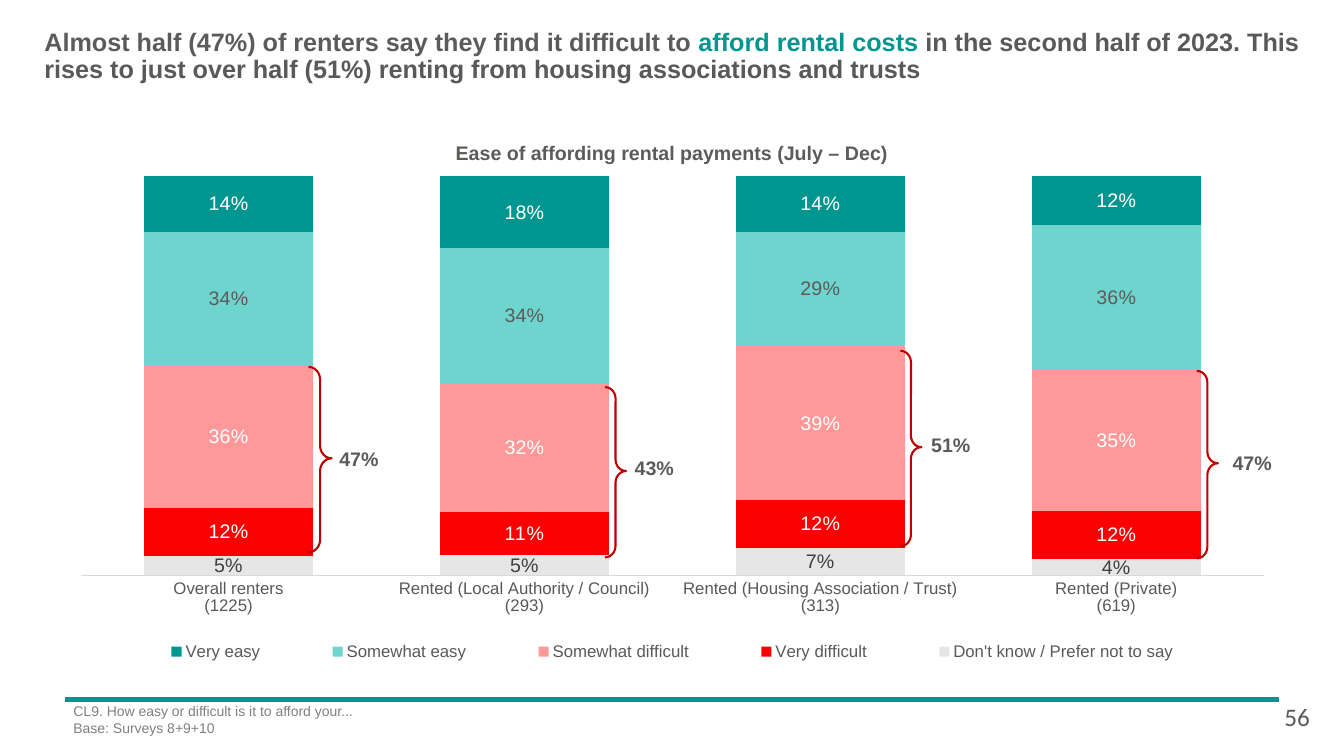
from lxml.etree import SubElement
from pptx import Presentation
from pptx.chart.data import CategoryChartData
from pptx.dml.color import RGBColor
from pptx.enum.chart import XL_CHART_TYPE, XL_LABEL_POSITION, XL_LEGEND_POSITION, XL_TICK_MARK
from pptx.enum.shapes import MSO_CONNECTOR, MSO_SHAPE
from pptx.enum.text import MSO_ANCHOR, MSO_AUTO_SIZE, PP_ALIGN
from pptx.oxml import parse_xml
from pptx.oxml.ns import nsdecls, qn
from pptx.util import Inches, Pt

TEAL = RGBColor(0x00, 0x96, 0x90)
LIGHT_TEAL = RGBColor(0x6D, 0xD5, 0xCE)
PINK = RGBColor(0xFF, 0x99, 0x99)
RED = RGBColor(0xFA, 0x00, 0x00)
DARK_RED = RGBColor(0xC0, 0x00, 0x00)
PALE_GREY = RGBColor(0xE7, 0xE6, 0xE6)
AXIS_GREY = RGBColor(0xD9, 0xD9, 0xD9)
NOTE_GREY = RGBColor(0x80, 0x80, 0x80)
TEXT_GREY = RGBColor(0x5C, 0x5B, 0x5A)
DARK_GREY = RGBColor(0x59, 0x59, 0x59)
CHARCOAL = RGBColor(0x40, 0x40, 0x40)
WHITE = RGBColor(0xFF, 0xFF, 0xFF)

TENURES = [
    "Overall renters\n(1225)",
    "Rented (Local Authority / Council)\n(293)",
    "Rented (Housing Association / Trust)\n(313)",
    "Rented (Private)\n(619)",
]
# answer, share per tenure, bar colour, label colour
ANSWERS = [
    ("Don't know / Prefer not to say", (0.05, 0.05, 0.07, 0.04), PALE_GREY, CHARCOAL),
    ("Very difficult", (0.12, 0.11, 0.12, 0.12), RED, WHITE),
    ("Somewhat difficult", (0.36, 0.32, 0.39, 0.35), PINK, WHITE),
    ("Somewhat easy", (0.34, 0.34, 0.29, 0.36), LIGHT_TEAL, TEXT_GREY),
    ("Very easy", (0.14, 0.18, 0.14, 0.12), TEAL, WHITE),
]
# total, brace box, total's left and top
DIFFICULT_TOTALS = [
    ("47%", (3.06, 3.64, 0.23, 1.84), (3.2, 4.43)),
    ("43%", (6, 3.84, 0.21, 1.69), (6.13, 4.52)),
    ("51%", (8.93, 3.48, 0.21, 1.94), (9.07, 4.29)),
    ("47%", (11.87, 3.68, 0.21, 1.86), (12.06, 4.47)),
]


def set_font(font, size, color, bold=False, face="Arial"):
    font.name = face
    font.size = Pt(size)
    font.bold = bold
    font.color.rgb = color


def set_layout(element, x, y, w, h, inner=False):
    """Place a chart part at fractions of the chart's size."""
    for old in element.findall(qn("c:layout")):
        element.remove(old)
    layout = parse_xml(f"<c:layout {nsdecls('c')}/>")
    manual = SubElement(layout, qn("c:manualLayout"))
    if inner:
        SubElement(manual, qn("c:layoutTarget")).set("val", "inner")
    for mode in ("xMode", "yMode"):
        SubElement(manual, qn(f"c:{mode}")).set("val", "edge")
    for side, value in zip("xywh", (x, y, w, h)):
        SubElement(manual, qn(f"c:{side}")).set("val", str(value))
    position = element.find(qn("c:legendPos"))
    if position is None:
        element.insert(0, layout)
    else:
        position.addnext(layout)


class SurveySlide:
    def __init__(self, presentation):
        self.slide = presentation.slides.add_slide(presentation.slide_layouts[5])
        self.shapes = self.slide.shapes

    def fill_frame(self, frame, paragraphs, size, bold=False, face="Arial",
                   align=PP_ALIGN.LEFT, inset=True):
        """Write paragraphs, each a list of (text, colour) runs."""
        frame.word_wrap = True
        frame.vertical_anchor = MSO_ANCHOR.TOP
        if not inset:
            frame.margin_left = frame.margin_right = 0
            frame.margin_top = frame.margin_bottom = 0
        for index, runs in enumerate(paragraphs):
            paragraph = frame.add_paragraph() if index else frame.paragraphs[0]
            paragraph.alignment = align
            for text, color in runs:
                run = paragraph.add_run()
                run.text = text
                set_font(run.font, size, color, bold, face)

    def title(self, box, runs):
        heading = self.shapes.title
        heading.left, heading.top, heading.width, heading.height = map(Inches, box)
        frame = heading.text_frame
        self.fill_frame(frame, [runs], 18, bold=True, inset=False)
        frame.auto_size = MSO_AUTO_SIZE.NONE
        frame.paragraphs[0].line_spacing = 0.9

    def text(self, box, paragraphs, size, **style):
        frame = self.shapes.add_textbox(*map(Inches, box)).text_frame
        self.fill_frame(frame, paragraphs, size, **style)

    def bold_label(self, box, text):
        self.text(box, [[(text, TEXT_GREY)]], 14, bold=True,
                  align=PP_ALIGN.CENTER, inset=False)

    def rule(self, x1, y1, x2, y2):
        line = self.shapes.add_connector(MSO_CONNECTOR.STRAIGHT,
                                         *map(Inches, (x1, y1, x2, y2)))
        line.line.color.rgb = TEAL
        line.line.width = Pt(3)
        SubElement(line._element.spPr, qn("a:effectLst"))

    def brace(self, box):
        brace = self.shapes.add_shape(MSO_SHAPE.RIGHT_BRACE, *map(Inches, box))
        brace.shadow.inherit = False
        brace.adjustments[0], brace.adjustments[1] = 0.545, 0.493
        brace.fill.background()
        brace.line.color.rgb = DARK_RED
        brace.line.width = Pt(1.5)

    def stacked_chart(self, box, categories, answers):
        data = CategoryChartData(number_format="0%")
        data.categories = categories
        for name, shares, _, _ in answers:
            data.add_series(name, shares)
        chart = self.shapes.add_chart(XL_CHART_TYPE.COLUMN_STACKED_100,
                                      *map(Inches, box), data).chart
        chart.has_title = False
        chart.font.name = "Arial"
        chart.font.size = Pt(10)

        plot = chart.plots[0]
        plot.gap_width, plot.overlap = 75, 100
        plot.vary_by_categories = False
        for series, (_, _, color, label_color) in zip(plot.series, answers):
            series.format.fill.solid()
            series.format.fill.fore_color.rgb = color
            labels = series.data_labels
            labels.show_value = True
            labels.number_format = "0%"
            labels.number_format_is_linked = False
            labels.position = XL_LABEL_POSITION.CENTER
            set_font(labels.font, 14, label_color)

        shares_axis = chart.value_axis
        shares_axis.visible = False
        shares_axis.has_major_gridlines = False
        shares_axis.minimum_scale, shares_axis.maximum_scale = 0, 1
        tenure_axis = chart.category_axis
        tenure_axis.major_tick_mark = XL_TICK_MARK.NONE
        tenure_axis.format.line.color.rgb = AXIS_GREY
        tenure_axis.format.line.width = Pt(0.75)
        set_font(tenure_axis.tick_labels.font, 12, DARK_GREY)

        chart.has_legend = True
        legend = chart.legend
        legend.position = XL_LEGEND_POSITION.RIGHT
        legend.include_in_layout = False
        set_font(legend.font, 12, DARK_GREY)
        set_layout(legend._element, 0.03, 0.87, 0.94, 0.07)
        set_layout(chart._chartSpace.chart.plotArea, 0.01, 0, 0.98, 0.76, inner=True)


def main():
    presentation = Presentation()
    presentation.slide_width = Inches(13.33)
    presentation.slide_height = Inches(7.5)
    page = SurveySlide(presentation)
    page.rule(0.64, 6.94, 12.69, 6.94)
    page.title((0.44, 0.29, 12.58, 0.81), [
        ("Almost half (47%) of renters say they find it difficult to ", TEXT_GREY),
        ("afford rental costs", TEAL),
        (" in the second half of 2023. This rises to just over half (51%) "
         "renting from housing associations and trusts", DARK_GREY),
    ])
    page.bold_label((4.45, 1.4, 4.43, 0.24), "Ease of affording rental payments (July – Dec)")
    page.stacked_chart((0.68, 1.75, 11.98, 5.21), TENURES, ANSWERS)
    for total, brace_box, corner in DIFFICULT_TOTALS:
        page.brace(brace_box)
        page.bold_label((*corner, 0.72, 0.24), total)
    page.text((0.63, 6.92, 11.98, 0.56), [
        [("CL9. How easy or difficult is it to afford your...", NOTE_GREY)],
        [("Base: Surveys 8+9+10", NOTE_GREY)],
    ], 10)
    page.text((12.64, 6.91, 0.53, 0.4), [[("56", TEXT_GREY)]], 18, face="Calibri")
    presentation.save("out.pptx")


if __name__ == "__main__":
    main()
